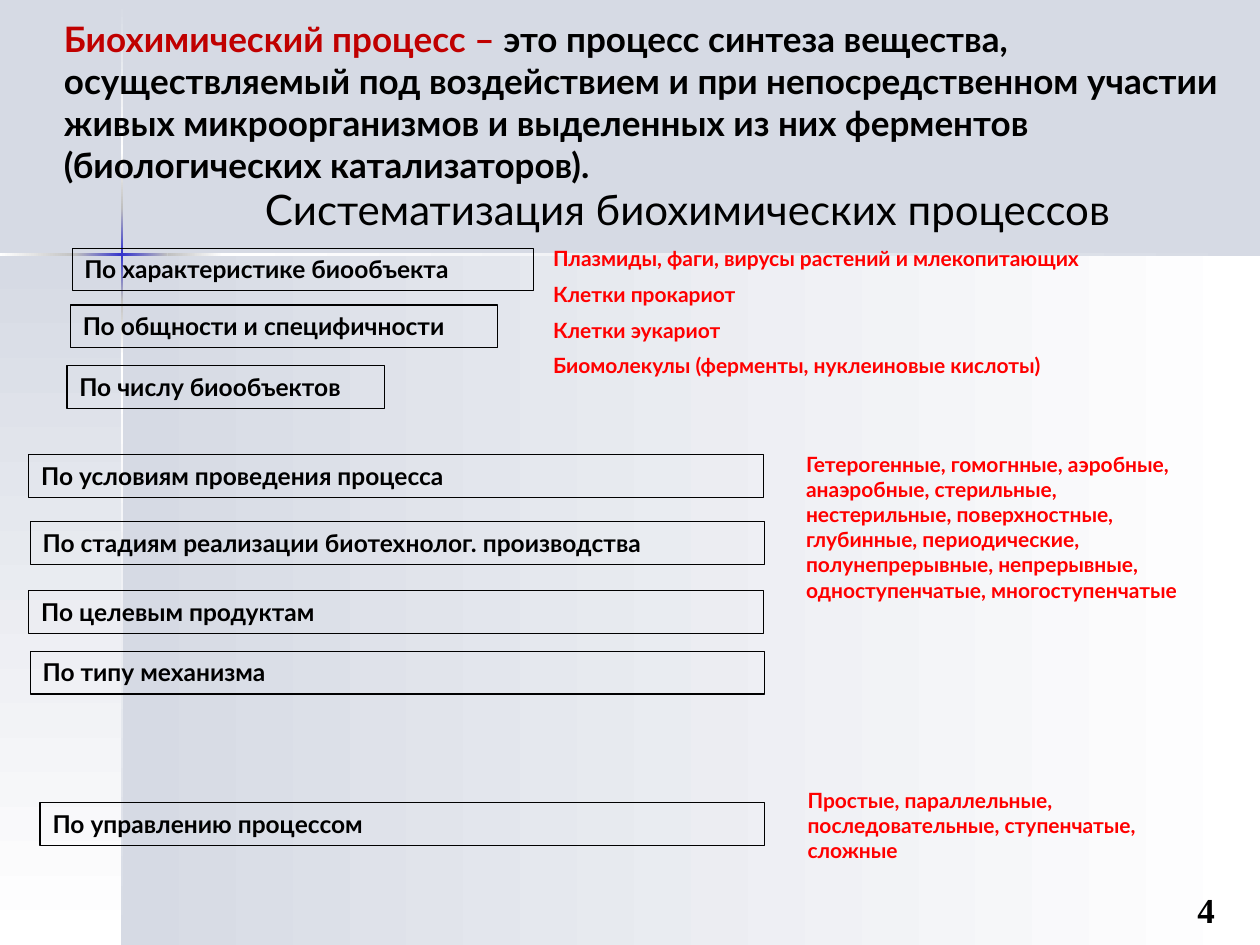
from copy import deepcopy

from pptx import Presentation
from pptx.dml.color import RGBColor
from pptx.enum.shapes import MSO_SHAPE
from pptx.enum.text import MSO_ANCHOR, PP_ALIGN
from pptx.util import Cm, Pt

BLACK, RED, DARK_RED = "000000", "FF0000", "C00000"
MIST, WHITE, SILVER, BLUE = "D6DAE4", "FFFFFF", "C0C0C0", "3333CC"
GLINT = (SILVER, BLUE, SILVER)


def colour(value):
    return RGBColor.from_string(value)


class Slide:
    font = "Lato"

    def __init__(self, page):
        self.page = page

    def background(self, value):
        fill = self.page.background.fill
        fill.solid()
        fill.fore_color.rgb = colour(value)

    def rectangle(self, left, top, width, height):
        box = self.page.shapes.add_shape(
            MSO_SHAPE.RECTANGLE, Cm(left), Cm(top), Cm(width), Cm(height))
        box.shadow.inherit = False
        return box

    def gradient(self, left, top, width, height, shades, vertical=False):
        box = self.rectangle(left, top, width, height)
        box.line.fill.background()
        box.fill.gradient()
        box.fill.gradient_angle = 270 if vertical else 0
        stop_list = box.fill.gradient_stops[0]._gs.getparent()
        for _ in shades[2:]:
            stop_list.append(deepcopy(stop_list[-1]))
        for index, (stop, shade) in enumerate(zip(box.fill.gradient_stops, shades)):
            stop.position = index / (len(shades) - 1)
            stop.color.rgb = colour(shade)

    def style(self, span, size, value, bold=True, font=None):
        span.font.name = font or self.font
        span.font.size = Pt(size)
        span.font.bold = bold
        span.font.color.rgb = colour(value)

    def set_text(self, box, text, size, value, bold=True, font=None,
                 align=PP_ALIGN.LEFT, anchor=MSO_ANCHOR.TOP):
        frame = box.text_frame
        frame.word_wrap = True
        frame.vertical_anchor = anchor
        frame.text = text
        for index, para in enumerate(frame.paragraphs):
            para.alignment = align
            para.space_before = Pt(size / 2 if index else 0)
            for span in para.runs:
                self.style(span, size, value, bold, font)
        return frame

    def label(self, left, top, width, text, line_width=0.75):
        box = self.rectangle(left, top, width, 0.86)
        box.fill.background()
        box.line.color.rgb = colour(BLACK)
        box.line.width = Pt(line_width)
        self.set_text(box, text, 14, BLACK)

    def text(self, left, top, width, height, text, size, value, **options):
        box = self.page.shapes.add_textbox(Cm(left), Cm(top), Cm(width), Cm(height))
        return self.set_text(box, text, size, value, **options)


def main():
    deck = Presentation()
    deck.slide_width, deck.slide_height = Cm(25.4), Cm(19.05)
    slide = Slide(deck.slides.add_slide(deck.slide_layouts[6]))
    slide.background(MIST)

    slide.gradient(2.46, 5.13, 22.94, 13.92, (MIST, WHITE))
    slide.gradient(0, 5.13, 2.46, 13.92, (MIST, WHITE), vertical=True)
    for top, height, shades in (
        (0.03, 3.04, (MIST, WHITE)),
        (7.16, 11.89, (WHITE, MIST)),
        (6.04, 1.12, (SILVER, WHITE)),
        (3.07, 1.12, (WHITE, SILVER)),
        (4.19, 1.85, GLINT),
    ):
        slide.gradient(2.44, top, 0.05, height, shades, vertical=True)
    for left, width, shades in (
        (4.5, 20.9, (WHITE, MIST)),
        (0, 1.55, (WHITE, SILVER)),
        (3.38, 1.12, (SILVER, WHITE)),
        (1.53, 1.85, GLINT),
    ):
        slide.gradient(left, 5.11, width, 0.05, shades)

    title = slide.text(1.04, 0.05, 24.43, 3.99, "Биохимический процесс – ",
                       20, DARK_RED, anchor=MSO_ANCHOR.MIDDLE)
    definition = title.paragraphs[0].add_run()
    definition.text = (
        "это процесс синтеза вещества, осуществляемый под воздействием и при "
        "непосредственном участии живых микроорганизмов и выделенных из них "
        "ферментов (биологических катализаторов).")
    slide.style(definition, 20, BLACK)
    slide.text(3.38, 3.58, 20.96, 2.41, "Систематизация биохимических процессов",
               24, BLACK, bold=False, align=PP_ALIGN.CENTER)

    slide.label(1.45, 5, 9.3, "По характеристике биообъекта", 0.25)
    for left, top, width, text in (
        (1.42, 6.15, 8.61, "По общности и специфичности"),
        (1.35, 7.37, 6.4, "По числу биообъектов"),
        (0.58, 9.17, 14.81, "По условиям проведения процесса"),
        (0.61, 10.52, 14.81, "По стадиям реализации биотехнолог. производства"),
        (0.58, 11.91, 14.81, "По целевым продуктам"),
        (0.61, 13.13, 14.81, "По типу механизма"),
        (0.81, 16.18, 14.6, "По управлению процессом"),
    ):
        slide.label(left, top, width, text)

    for left, top, width, height, text in (
        (10.9, 4.83, 12.42, 4.5,
         "Плазмиды, фаги, вирусы растений и млекопитающих\n"
         "Клетки прокариот\nКлетки эукариот\n"
         "Биомолекулы (ферменты, нуклеиновые кислоты)"),
        (16, 8.97, 8, 4.37,
         "Гетерогенные, гомогнные, аэробные, анаэробные, стерильные, "
         "нестерильные, поверхностные, глубинные, периодические, "
         "полунепрерывные, непрерывные, одноступенчатые, многоступенчатые"),
        (16.03, 15.75, 7.98, 1.8,
         "Простые, параллельные, последовательные, ступенчатые, сложные"),
    ):
        slide.text(left, top, width, height, text, 12, RED)

    slide.text(19.46, 17.78, 5.28, 1.27, "4", 20, BLACK,
               font="Times New Roman", align=PP_ALIGN.RIGHT)
    deck.save("out.pptx")


if __name__ == "__main__":
    main()
